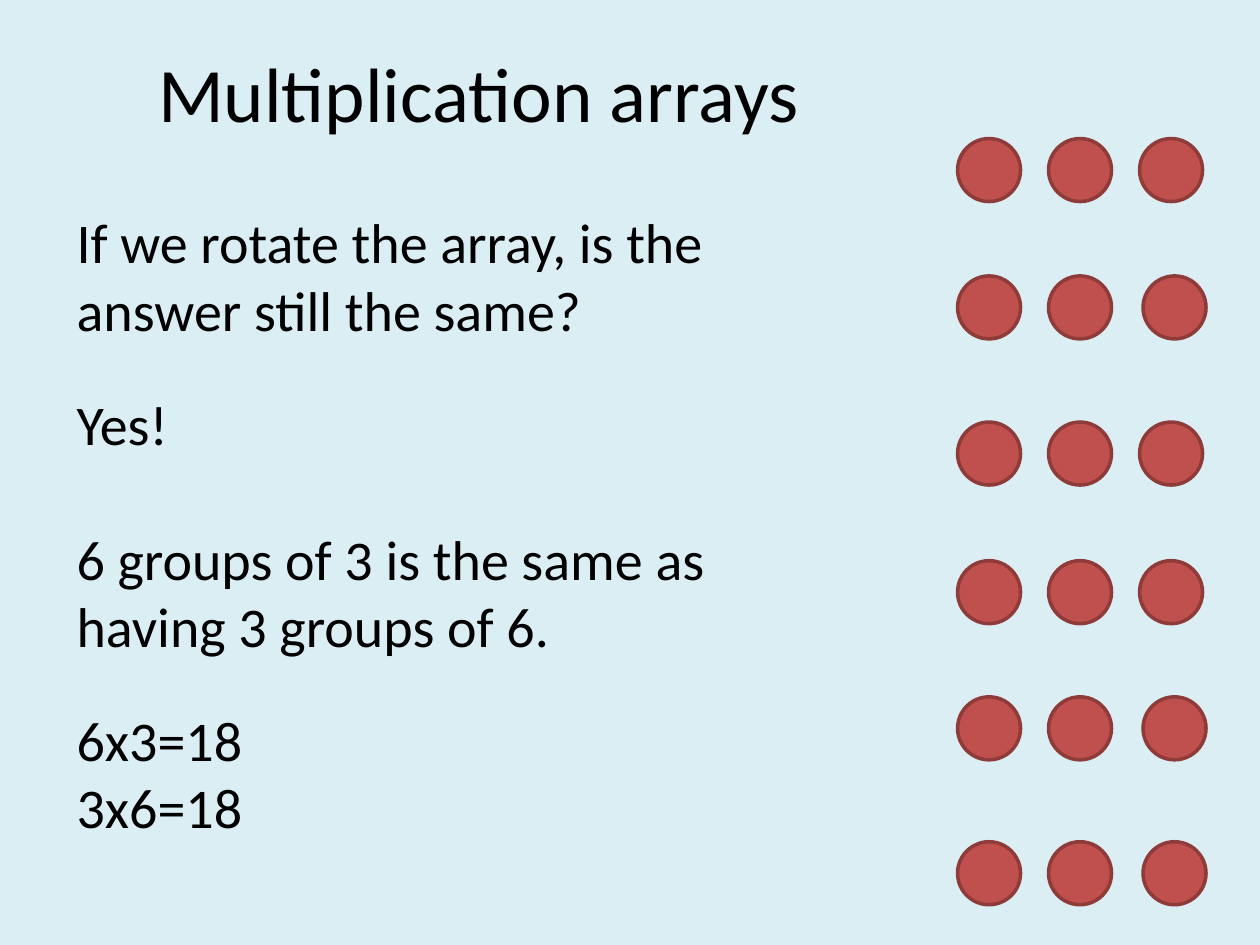
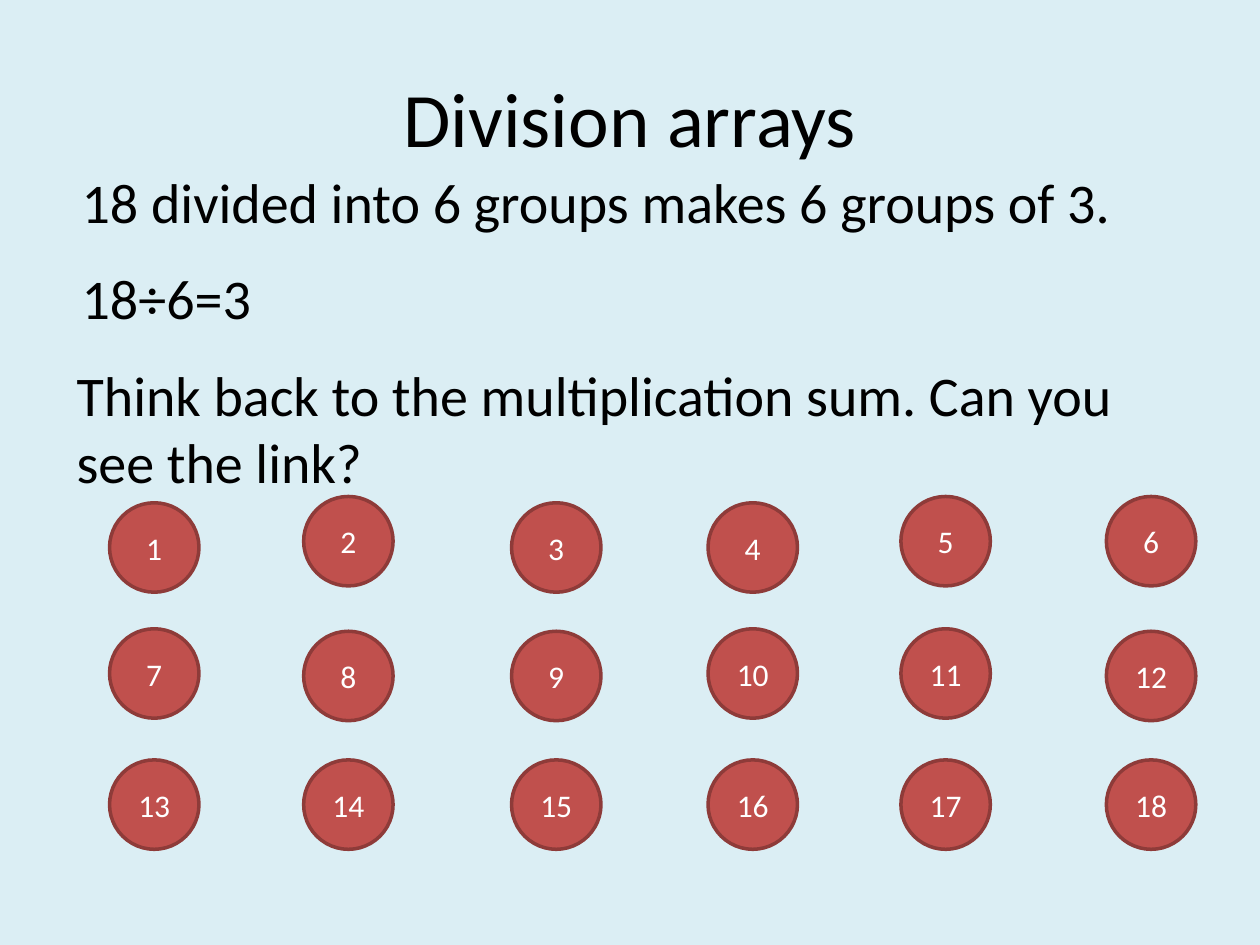
from dataclasses import dataclass, field

from pptx import Presentation
from pptx.dml.color import RGBColor
from pptx.enum.shapes import MSO_SHAPE as Shape
from pptx.enum.text import MSO_ANCHOR as Anchor, MSO_AUTO_SIZE as AutoSize, PP_ALIGN as Align
from pptx.util import Pt

PALE_BLUE = RGBColor(0xDB, 0xEE, 0xF4)
RED = RGBColor(0xC0, 0x50, 0x4D)
DARK_RED = RGBColor(0x8E, 0x3B, 0x39)
BLACK = RGBColor(0, 0, 0)
WHITE = RGBColor(0xFF, 0xFF, 0xFF)

TITLE_FORMAT = {"name": "Calibri", "size": Pt(44), "color": BLACK}
BODY_FORMAT = {"name": "Calibri", "size": Pt(32), "color": BLACK}
NUMBER_FORMAT = {"name": "Calibri", "size": Pt(18), "color": WHITE}


@dataclass(frozen=True)
class Area:
    left: float
    top: float
    width: float
    height: float

    def lengths(self) -> tuple:
        return tuple(Pt(length) for length in (self.left, self.top, self.width, self.height))


@dataclass(frozen=True)
class Note:
    area: Area
    lines: tuple
    gap: float = 0


@dataclass(frozen=True)
class CounterArray:
    lefts: tuple
    tops: tuple
    size: float
    numbered: bool = False
    nudges: dict = field(default_factory=dict)


@dataclass(frozen=True)
class ArraySlide:
    title: str
    title_area: Area
    notes: tuple
    counters: CounterArray


MULTIPLICATION = ArraySlide(
    "Multiplication arrays",
    Area(0, 7.2, 547.2, 90),
    (
        Note(Area(36.7, 115.2, 448, 85), ("If we rotate the array, is the answer still the same?",)),
        Note(
            Area(36.7, 218.9, 448, 163),
            ("Yes!", "6 groups of 3 is the same as having 3 groups of 6."),
            gap=39,
        ),
        Note(Area(36.7, 399.6, 448, 85), ("6x3=18", "3x6=18")),
    ),
    CounterArray(
        lefts=tuple(547.2 + 52 * column for column in range(3)),
        tops=(79.2, 157.7, 241.2, 320.4, 398.2, 481),
        size=36,
        nudges={(row, 2): (2, 0) for row in (1, 4, 5)},
    ),
)

DIVISION = ArraySlide(
    "Division arrays",
    Area(36, 21.6, 648, 90),
    (
        Note(Area(39.6, 92.2, 607, 46), ("18 divided into 6 groups makes 6 groups of 3.",)),
        Note(Area(39.6, 146.9, 607, 46), ("18÷6=3",)),
        Note(
            Area(36.7, 202.3, 607, 85),
            ("Think back to the multiplication sum. Can you see the link?",),
        ),
    ),
    CounterArray(
        lefts=(62.6, 173.5, 292.3, 404.6, 514.8, 632.2),
        tops=(287.3, 359.3, 434.2),
        size=51.1,
        numbered=True,
        nudges={
            **{(0, column): (0, -3.6) for column in (1, 4, 5)},
            **{(1, column): (0, 1.4) for column in (1, 2, 5)},
        },
    ),
)


def write(para, text: str, values: dict) -> None:
    span = para.add_run()
    span.text = text
    for name, value in values.items():
        if name == "color":
            span.font.color.rgb = value
        else:
            setattr(span.font, name, value)


def draw_title(page, text: str, area: Area) -> None:
    title = page.shapes.title
    title.left, title.top, title.width, title.height = area.lengths()
    title.text_frame.vertical_anchor = Anchor.MIDDLE
    para = title.text_frame.paragraphs[0]
    para.alignment = Align.CENTER
    write(para, text, TITLE_FORMAT)


def draw_note(page, note: Note) -> None:
    frame = page.shapes.add_textbox(*note.area.lengths()).text_frame
    frame.word_wrap = True
    frame.auto_size = AutoSize.SHAPE_TO_FIT_TEXT
    for index, line in enumerate(note.lines):
        para = frame.add_paragraph() if index else frame.paragraphs[0]
        if index:
            para.space_before = Pt(note.gap)
        write(para, line, BODY_FORMAT)


def draw_counter(shapes, area: Area, label: str) -> None:
    counter = shapes.add_shape(Shape.OVAL, *area.lengths())
    counter.shadow.inherit = False
    counter.fill.solid()
    counter.fill.fore_color.rgb = RED
    counter.line.color.rgb = DARK_RED
    counter.line.width = Pt(2)
    if label:
        counter.text_frame.vertical_anchor = Anchor.MIDDLE
        para = counter.text_frame.paragraphs[0]
        para.alignment = Align.CENTER
        write(para, label, NUMBER_FORMAT)


def draw_counters(page, counters: CounterArray) -> None:
    shapes = page.shapes if counters.numbered else page.shapes.add_group_shape().shapes
    for row, top in enumerate(counters.tops):
        for column, left in enumerate(counters.lefts):
            shift_x, shift_y = counters.nudges.get((row, column), (0, 0))
            area = Area(left + shift_x, top + shift_y, counters.size, counters.size)
            number = row * len(counters.lefts) + column + 1
            draw_counter(shapes, area, str(number) if counters.numbered else "")


def main() -> None:
    deck = Presentation()
    deck.slide_width, deck.slide_height = Pt(720), Pt(540)
    background = deck.slide_master.background.fill
    background.solid()
    background.fore_color.rgb = PALE_BLUE
    title_only = deck.slide_layouts.get_by_name("Title Only")
    for content in (MULTIPLICATION, DIVISION):
        page = deck.slides.add_slide(title_only)
        draw_title(page, content.title, content.title_area)
        draw_counters(page, content.counters)
        for note in content.notes:
            draw_note(page, note)
    deck.save("out.pptx")


if __name__ == "__main__":
    main()
